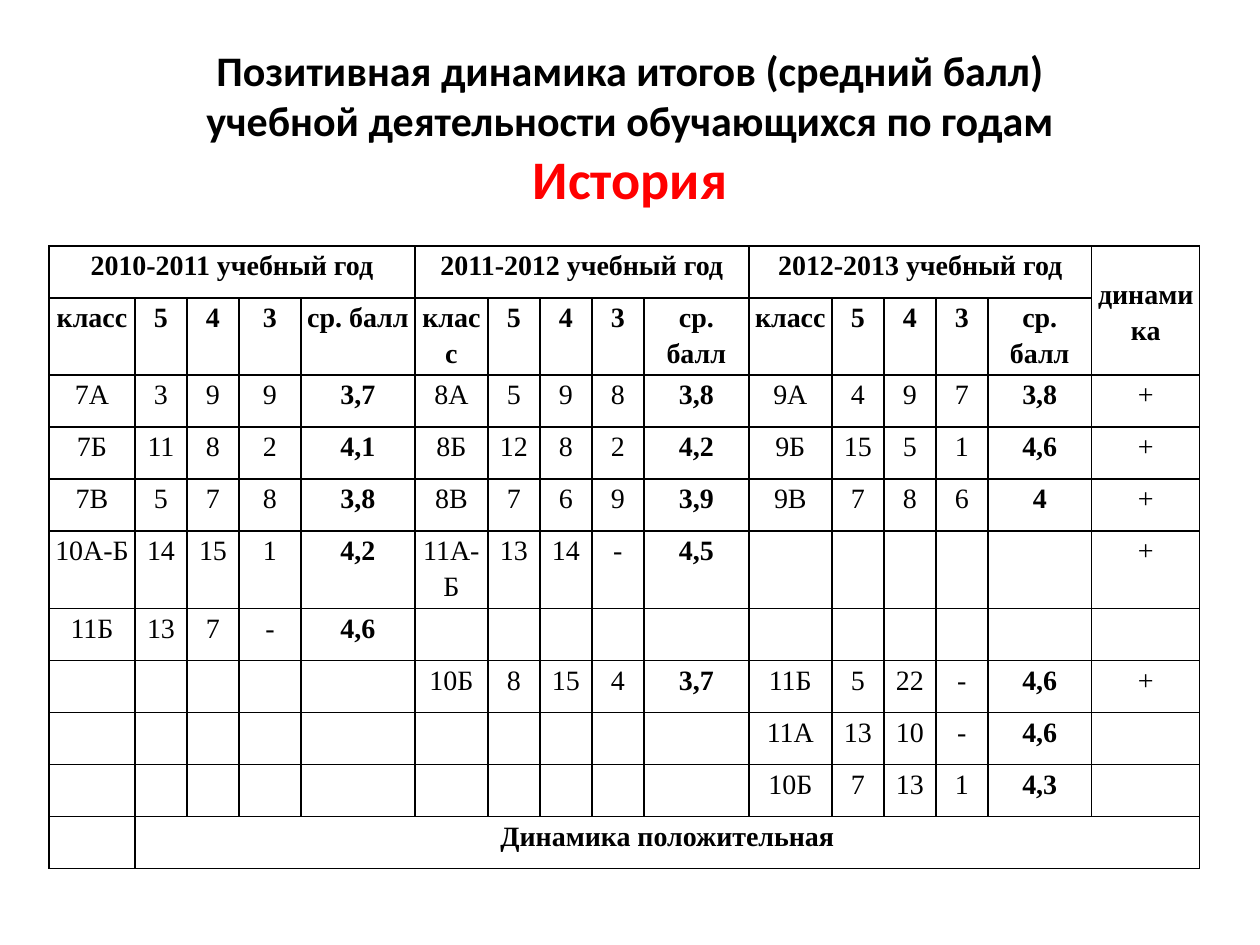
from lxml import etree
from pptx import Presentation
from pptx.dml.color import RGBColor
from pptx.enum.text import MSO_ANCHOR, PP_ALIGN
from pptx.oxml.ns import qn
from pptx.util import Emu, Pt

CENTER = PP_ALIGN.CENTER
MIDDLE, TOP = MSO_ANCHOR.MIDDLE, MSO_ANCHOR.TOP
BLACK = RGBColor(0x00, 0x00, 0x00)
RED = RGBColor(0xFF, 0x00, 0x00)

PX_PER_INCH = 126
SLIDE_W, SLIDE_H = 1260, 945
ROW_H = 52
COL_W = [86, 52, 52, 62, 114, 73, 52, 52, 52, 105, 83, 52, 52, 52, 104, 108]
BLOCK = 5  # columns per school year
LAST = len(COL_W) - 1

TITLE_LINES = [
    ("Позитивная динамика итогов (средний балл)", 24, BLACK),
    ("учебной деятельности обучающихся по годам", 24, BLACK),
    ("История", 31, RED),
]
YEARS = ["2010-2011 учебный год", "2011-2012 учебный год", "2012-2013 учебный год"]
HEADINGS = ["класс", "5", "4", "3", "ср. балл"]
NONE = [""] * BLOCK
# One block of class, counts of marks and average per year, then the trend
RESULTS = [
    (["7А", "3", "9", "9", "3,7"], ["8А", "5", "9", "8", "3,8"], ["9А", "4", "9", "7", "3,8"], "+"),
    (["7Б", "11", "8", "2", "4,1"], ["8Б", "12", "8", "2", "4,2"], ["9Б", "15", "5", "1", "4,6"], "+"),
    (["7В", "5", "7", "8", "3,8"], ["8В", "7", "6", "9", "3,9"], ["9В", "7", "8", "6", "4"], "+"),
    (["10А-Б", "14", "15", "1", "4,2"], ["11А-Б", "13", "14", "-", "4,5"], NONE, "+"),
    (["11Б", "13", "7", "-", "4,6"], NONE, NONE, ""),
    (NONE, ["10Б", "8", "15", "4", "3,7"], ["11Б", "5", "22", "-", "4,6"], "+"),
    (NONE, NONE, ["11А", "13", "10", "-", "4,6"], ""),
    (NONE, NONE, ["10Б", "7", "13", "1", "4,3"], ""),
]


def px(n):
    return Emu(round(n * 914400 / PX_PER_INCH))


def set_attrs(obj, **values):
    for name, value in values.items():
        setattr(obj, name, value)


def add_run(p, text, font_name, size, color, bold):
    r = p.add_run()
    r.text = text
    set_attrs(r.font, name=font_name, size=Pt(size), bold=bold)
    r.font.color.rgb = color


def add_title(slide, left, top, width, height):
    tf = slide.shapes.add_textbox(px(left), px(top), px(width), px(height)).text_frame
    set_attrs(tf, word_wrap=True, vertical_anchor=MIDDLE)
    p = tf.paragraphs[0]
    p.alignment = CENTER
    for i, (text, size, color) in enumerate(TITLE_LINES):
        if i:
            p.add_line_break()
        add_run(p, text, "Calibri", size, color, True)


def add_borders(cell):
    tc_pr = cell._tc.get_or_add_tcPr()
    for side in ("a:lnL", "a:lnR", "a:lnT", "a:lnB"):
        ln = etree.SubElement(tc_pr, qn(side), w=str(Pt(1)))
        fill = etree.SubElement(ln, qn("a:solidFill"))
        etree.SubElement(fill, qn("a:srgbClr"), val=str(BLACK))


def format_cell(cell, text, bold, anchor):
    add_borders(cell)
    cell.fill.background()
    set_attrs(cell, margin_left=px(6), margin_right=px(6),
              margin_top=0, margin_bottom=0, vertical_anchor=anchor)
    p = cell.text_frame.paragraphs[0]
    set_attrs(p, alignment=CENTER, line_spacing=1.15)
    if text:
        add_run(p, text, "Times New Roman", 16, BLACK, bold)


def table_rows():
    """Return the text of every cell, with blanks where a merge covers it."""
    pad = [""] * (BLOCK - 1)
    years = [text for year in YEARS for text in [year] + pad]
    rows = [years + ["динамика"], HEADINGS * len(YEARS) + [""]]
    rows += [a + b + c + [trend] for a, b, c, trend in RESULTS]
    rows.append(["", "Динамика положительная"] + [""] * (LAST - 1))
    return rows


def add_results_table(slide, left, top):
    rows = table_rows()
    bottom = len(rows) - 1
    table = slide.shapes.add_table(
        len(rows), len(COL_W), px(left), px(top), px(sum(COL_W)), px(ROW_H * len(rows))
    ).table
    set_attrs(table, first_row=False, horz_banding=False)
    for col, width in zip(table.columns, COL_W):
        col.width = px(width)
    for row in table.rows:
        row.height = px(ROW_H)

    for i, texts in enumerate(rows):
        for j, text in enumerate(texts):
            is_average = j < LAST and j % BLOCK == BLOCK - 1
            bold = i < 2 or i == bottom or is_average
            anchor = MIDDLE if i == 0 and j == LAST else TOP
            format_cell(table.cell(i, j), text, bold, anchor)

    for j in range(0, LAST, BLOCK):
        table.cell(0, j).merge(table.cell(0, j + BLOCK - 1))
    table.cell(0, LAST).merge(table.cell(1, LAST))
    table.cell(bottom, 1).merge(table.cell(bottom, LAST))


def main():
    prs = Presentation()
    set_attrs(prs, slide_width=px(SLIDE_W), slide_height=px(SLIDE_H))
    slide = prs.slides.add_slide(prs.slide_layouts[6])
    add_title(slide, 63, 38, 1134, 179)
    add_results_table(slide, 49, 246)
    prs.save("out.pptx")


if __name__ == "__main__":
    main()
